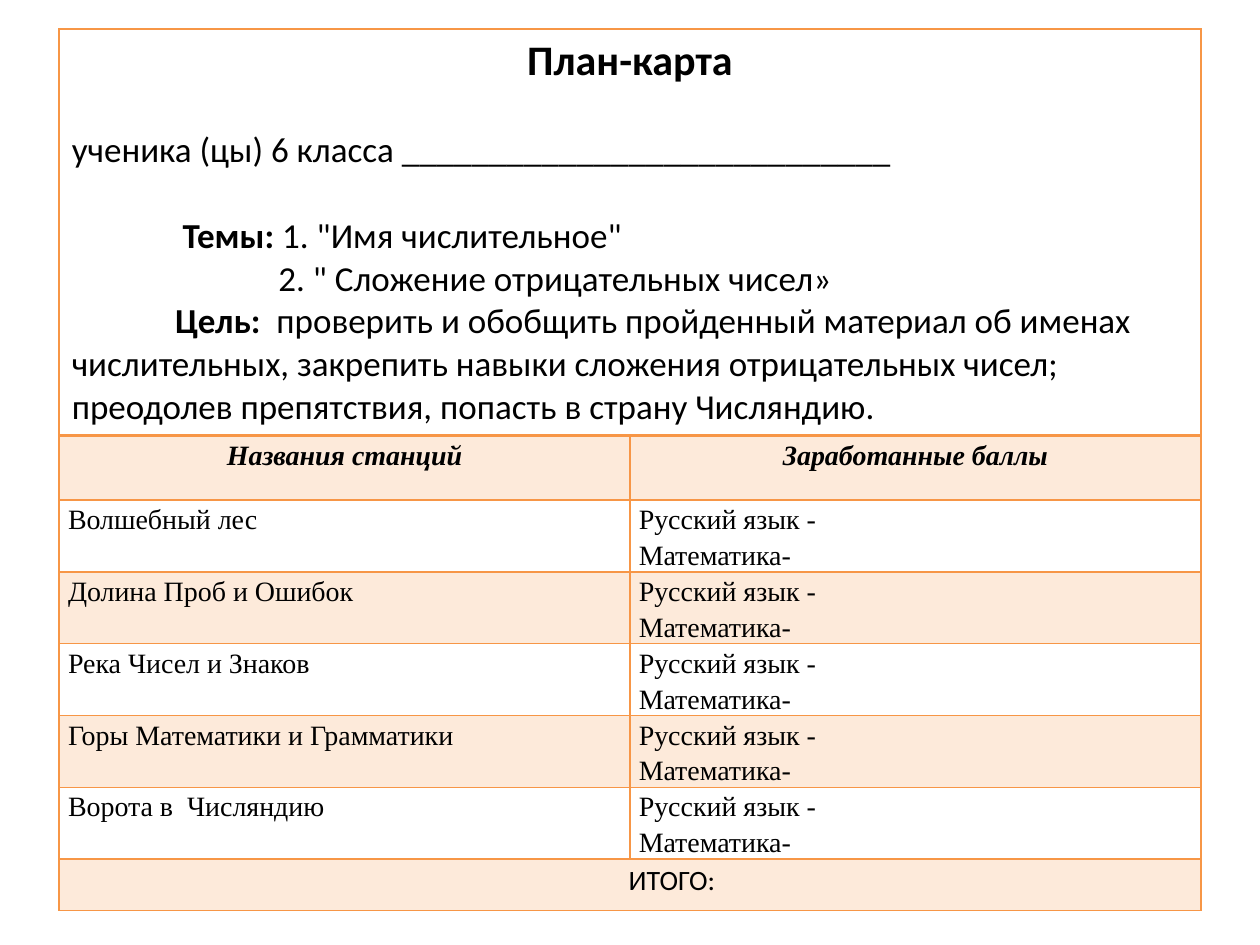
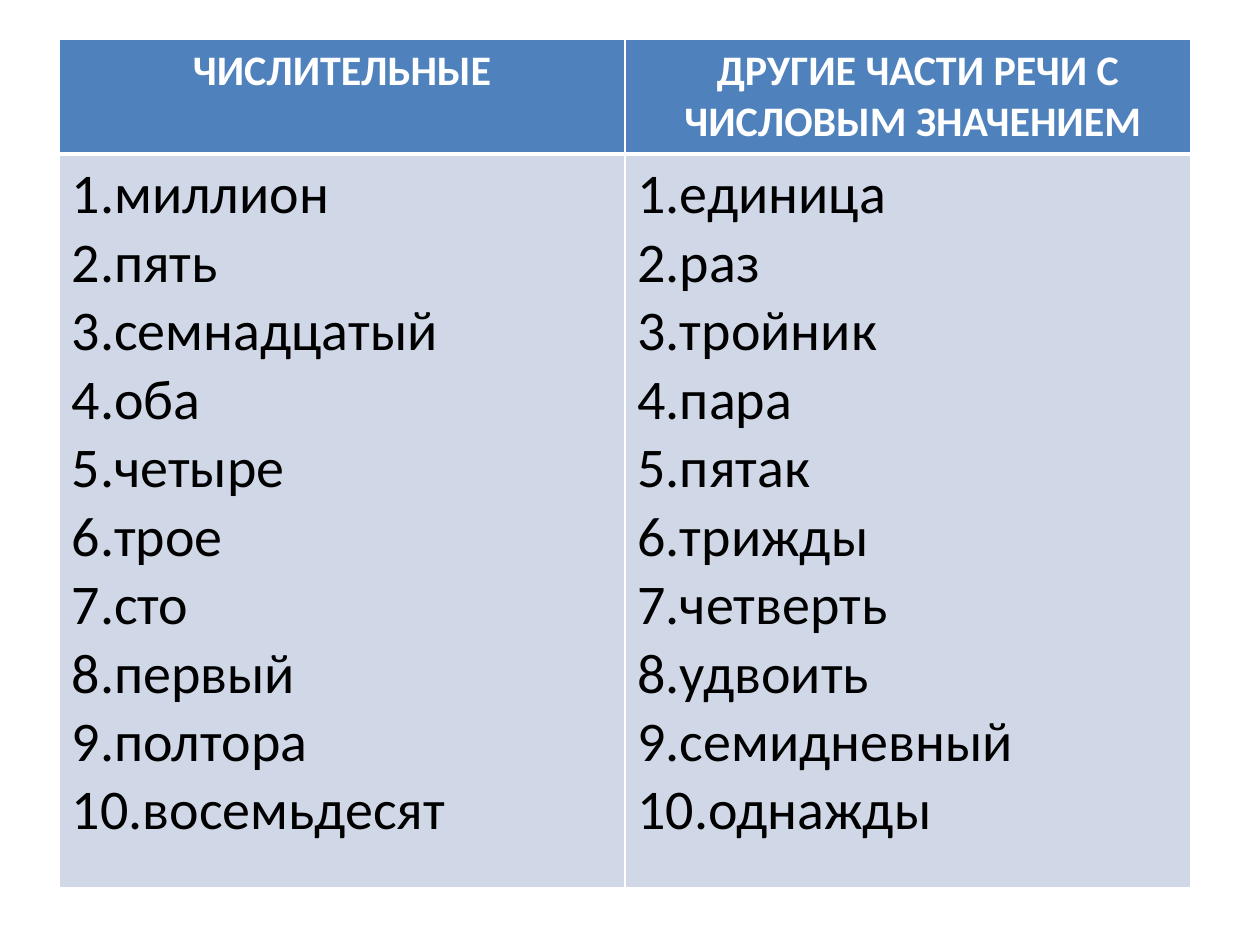
from dataclasses import dataclass

from lxml.etree import SubElement
from pptx import Presentation
from pptx.dml.color import RGBColor
from pptx.enum.text import PP_ALIGN
from pptx.oxml.ns import qn
from pptx.util import Inches, Pt


@dataclass(frozen=True)
class Theme:
    sans: str = "Calibri"
    serif: str = "Times New Roman"
    black: str = "000000"
    white: str = "FFFFFF"
    orange: str = "F79646"
    blue: str = "4F81BD"
    pale: str = "D0D8E8"
    tint: int = 20
    title: int = 24
    text: int = 20
    small: int = 16
    large: int = 32


theme = Theme()

STOPS = ["Волшебный лес", "Долина Проб и Ошибок", "Река Чисел и Знаков",
         "Горы Математики и Грамматики", "Ворота в  Числяндию"]
SCORES = ["Русский язык -", "Математика-"]
GOAL = ("проверить и обобщить пройденный материал об именах числительных, "
        "закрепить навыки сложения отрицательных чисел; преодолев "
        "препятствия, попасть в страну Числяндию.")
WORDS = {
    "ЧИСЛИТЕЛЬНЫЕ": ["миллион", "пять", "семнадцатый", "оба", "четыре",
                     "трое", "сто", "первый", "полтора", "восемьдесят"],
    "ДРУГИЕ ЧАСТИ РЕЧИ С ЧИСЛОВЫМ ЗНАЧЕНИЕМ": [
        "единица", "раз", "тройник", "пара", "пятак", "трижды",
        "четверть", "удвоить", "семидневный", "однажды"],
}


def make_grid(slide, box, rows):
    """Add a plain table of two equal columns with the given row heights."""
    left, top, width = box
    grid = slide.shapes.add_table(len(rows), 2, Inches(left), Inches(top),
                                  Inches(width), Inches(sum(rows))).table
    grid.first_row = grid.horz_banding = False
    for col in grid.columns:
        col.width = Inches(width / 2)
    for row, high in zip(grid.rows, rows):
        row.height = Inches(high)
    return grid


def style_cell(cell, edge, top=1, base=1, fill=None, tint=100):
    """Draw the four borders, then the fill."""
    props = cell._tc.get_or_add_tcPr()
    for side, size in zip("LRTB", (1, 1, top, base)):
        line = SubElement(props, qn(f"a:ln{side}"), w=str(Pt(size)))
        paint = SubElement(line, qn("a:solidFill"))
        SubElement(paint, qn("a:srgbClr"), val=edge)
    if fill is None:
        cell.fill.background()
        return
    cell.fill.solid()
    cell.fill.fore_color.rgb = RGBColor.from_string(fill)
    if tint < 100:
        color = props.find(qn("a:solidFill")).find(qn("a:srgbClr"))
        SubElement(color, qn("a:alpha"), val=str(tint * 1000))


def add_para(cell, text, size, face=theme.sans, color=theme.black, bold=False,
             slant=False, align=PP_ALIGN.LEFT, indent=0, margin=0, lead="",
             before=0, pitch=None):
    """Fill the first free paragraph; lead is a bold opening run."""
    frame = cell.text_frame
    para = frame.paragraphs[0] if not frame.text else frame.add_paragraph()
    para.alignment = align
    para.space_before = Pt(before)
    if pitch:
        para.line_spacing = pitch
    props = para._p.get_or_add_pPr()
    props.set("marL", str(Inches(margin)))
    props.set("indent", str(Inches(indent)))
    font = para.font
    font.name, font.size = face, Pt(size)
    font.bold, font.italic = bold, slant
    font.color.rgb = RGBColor.from_string(color)
    if lead:
        run = para.add_run()
        run.text, run.font.bold = lead, True
    para.add_run().text = text


def fill_intro(cell):
    """Title, pupil line, topics and goal."""
    size = theme.text
    add_para(cell, "План-карта", theme.title, bold=True,
             align=PP_ALIGN.CENTER)
    add_para(cell, "ученика (цы) 6 класса " + "_" * 28, size, before=24.4)
    add_para(cell, '1. "Имя числительное"', size, lead="Темы: ",
             indent=0.88, before=24.4)
    add_para(cell, '2. " Сложение отрицательных чисел»', size, indent=1.64)
    add_para(cell, GOAL, size, lead="Цель:  ", indent=0.82)


def add_plan(slide, box):
    """Plan card: intro, stations with scores, total."""
    rows = [3.23, 0.51] + [0.57] * len(STOPS) + [0.41]
    grid = make_grid(slide, box, rows)
    last = len(rows) - 1

    # Borders, bands and insets
    for num, row in enumerate(grid.rows):
        for cell in row.cells:
            style_cell(cell, theme.orange, top=2 if num == 1 else 1,
                       base=2 if num == 0 else 1,
                       fill=theme.orange if num % 2 else None,
                       tint=theme.tint)
            if num:
                cell.margin_left = cell.margin_right = Inches(0.07)
                cell.margin_top = cell.margin_bottom = 0
    for num in (0, last):
        grid.cell(num, 0).merge(grid.cell(num, 1))

    # Text
    fill_intro(grid.cell(0, 0))
    body = dict(size=theme.small, face=theme.serif, pitch=1.15)
    for col, head in enumerate(["Названия станций", "Заработанные баллы"]):
        add_para(grid.cell(1, col), head, bold=True, slant=True,
                 align=PP_ALIGN.CENTER, **body)
    for num, stop in enumerate(STOPS, 2):
        add_para(grid.cell(num, 0), stop, **body)
        for score in SCORES:
            add_para(grid.cell(num, 1), score, **body)
    add_para(grid.cell(last, 0), "ИТОГО:", theme.small, pitch=1.15,
             indent=4.45)


def add_words(slide, box):
    """Two numbered word lists under coloured heads."""
    grid = make_grid(slide, box, [0.9, 5.82])
    for col, (head, words) in enumerate(WORDS.items()):
        top, body = grid.cell(0, col), grid.cell(1, col)
        style_cell(top, theme.white, base=3, fill=theme.blue)
        style_cell(body, theme.white, top=3, fill=theme.pale)
        shift = 0.08 * col
        add_para(top, head, theme.title, color=theme.white, bold=True,
                 align=PP_ALIGN.CENTER, margin=shift, indent=shift)
        for num, word in enumerate(words, 1):
            add_para(body, f"{num}.{word}", theme.large)


def main():
    deck = Presentation()
    deck.slide_width, deck.slide_height = Inches(10), Inches(7.5)
    blank = deck.slide_layouts[6]
    add_plan(deck.slides.add_slide(blank), (0.47, 0.23, 9.06))
    add_words(deck.slides.add_slide(blank), (0.47, 0.31, 8.98))
    deck.save("out.pptx")


if __name__ == "__main__":
    main()
